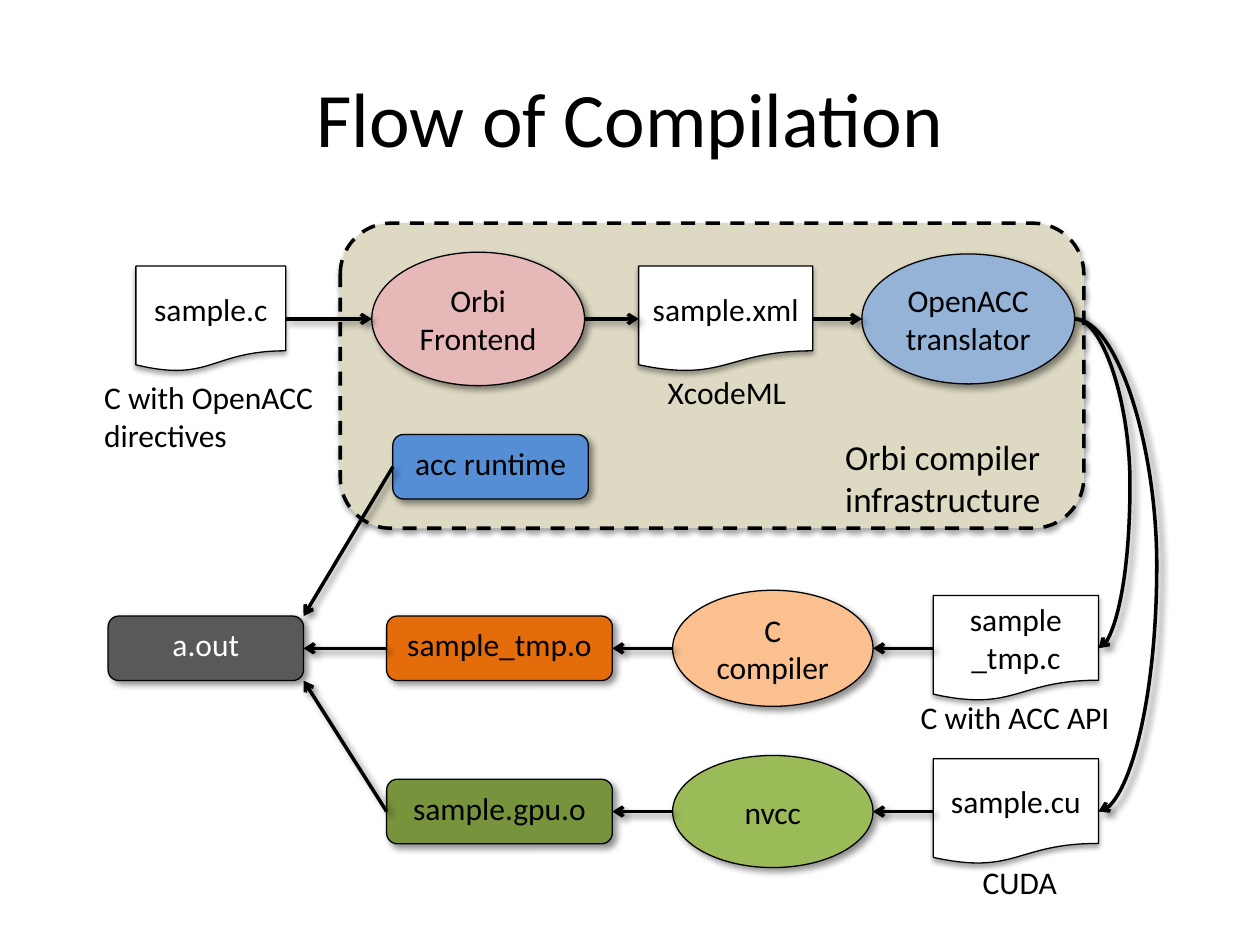
from lxml import etree
from pptx import Presentation
from pptx.dml.color import RGBColor
from pptx.enum import dml, shapes, text
from pptx.oxml import ns
from pptx.util import Cm, Pt

# Content: lengths in cm, nodes placed by their centres
TITLE = "Flow of Compilation"
ROWS = {"front": 6.43, "run": 9.41, "host": 13.07, "gpu": 16.36}
PANEL = (6.86, 4.5, 14.99, 6.15)

# key: words, kind, fill, centre x, row, width, height
NODES = {
    "src": ("sample.c", "doc", "white", 4.25, "front", 3.02, 2.13),
    "parse": ("Orbi Frontend", "oval", "pink", 9.64, "front", 4.29, 2.69),
    "xml": ("sample.xml", "doc", "white", 14.63, "front", 3.51, 2.13),
    "trans": ("OpenACC\ntranslator", "oval", "sky", 19.52, "front", 4.29, 2.62),
    "lib": ("acc runtime", "box", "blue", 9.89, "run", 3.94, 1.3),
    "out": ("a.out", "box", "gray", 4.15, "host", 3.94, 1.3),
    "obj": ("sample_tmp.o", "box", "orange", 10.07, "host", 4.55, 1.3),
    "cc": ("C compiler", "oval", "peach", 15.58, "host", 4.04, 2.34),
    "tmp": ("sample\n_tmp.c", "doc", "white", 20.48, "host", 3.33, 2.13),
    "gpu": ("sample.gpu.o", "box", "green", 10.07, "gpu", 4.55, 1.3),
    "nvcc": ("nvcc", "oval", "lime", 15.58, "gpu", 4.04, 2.26),
    "cu": ("sample.cu", "doc", "white", 20.48, "gpu", 3.33, 2.13),
}

# from, side, to, side
FLOWS = [
    ("src", "right", "parse", "left"), ("parse", "right", "xml", "left"),
    ("xml", "right", "trans", "left"), ("tmp", "left", "cc", "right"),
    ("cc", "left", "obj", "right"), ("obj", "left", "out", "right"),
    ("cu", "left", "nvcc", "right"), ("nvcc", "left", "gpu", "right"),
    ("lib", "left", "out", "top right"), ("gpu", "left", "out", "low right"),
]
# target of a curve from the translator, x of its bulge
CURVES = [("tmp", 22.78), ("cu", 23.32)]

# words, left, top, width, height, size, wrap
LABELS = [
    ("Orbi compiler infrastructure", 16.79, 8.66, 4.8, 1.96, "large", True),
    ("XcodeML", 13.21, 7.39, 2.95, 1.02, "body", False),
    ("C with ACC API", 18.31, 13.94, 4.52, 1.02, "body", True),
    ("CUDA", 19.56, 17.27, 2.03, 1.02, "body", False),
    ("C with OpenACC\ndirectives", 1.85, 7.49, 4.78, 1.8, "body", False),
]

THEME = {
    "font": "Calibri",
    "size": {"title": 44, "large": 20, "body": 18},
    "line": {"thin": 0.75, "bold": 2},
    "color": {
        "black": "000000", "white": "FFFFFF", "sand": "DDD9C3",
        "pink": "E6B9B8", "sky": "95B3D7", "blue": "558ED5",
        "gray": "595959", "orange": "E46C0A", "peach": "FAC090",
        "green": "77933C", "lime": "9BBB59",
    },
    # opacity %, blur pt, distance pt, angle
    "shadow": {"soft": (35, 3.1, 1.8, 90), "deep": (43, 4, 3, 45)},
}
KINDS = {
    "box": shapes.MSO_SHAPE.ROUNDED_RECTANGLE,
    "oval": shapes.MSO_SHAPE.OVAL,
    "doc": shapes.MSO_SHAPE.FLOWCHART_DOCUMENT,
}
SITES = {"left": 1, "right": 3}


def tint(name):
    return RGBColor.from_string(THEME["color"][name])


def add(parent, tag, **attrs):
    return etree.SubElement(parent, ns.qn(tag), {k: str(v) for k, v in attrs.items()})


def shade(shape, style):
    alpha, blur, dist, angle = THEME["shadow"][style]
    effects = add(shape._element.spPr, "a:effectLst")
    outer = add(effects, "a:outerShdw", blurRad=Pt(blur), dist=Pt(dist),
                dir=angle * 60000, algn="tl", rotWithShape=0)
    color = add(outer, "a:srgbClr", val=THEME["color"]["black"])
    add(color, "a:alpha", val=alpha * 1000)


def write(frame, words, size="body", color="black", align=None):
    frame.text = words
    for para in frame.paragraphs:
        para.alignment = align
        para.font.name = THEME["font"]
        para.font.size = Pt(THEME["size"][size])
        para.font.color.rgb = tint(color)


def draw(slide, kind, place, fill, weight, style):
    shape = slide.shapes.add_shape(KINDS[kind], *map(Cm, place))
    shape.fill.solid()
    shape.fill.fore_color.rgb = tint(fill)
    shape.line.color.rgb = tint("black")
    shape.line.width = Pt(THEME["line"][weight])
    shade(shape, style)
    return shape


def point(key, side):
    _, _, _, x, row, w, h = NODES[key]
    x += w / 2 if "right" in side else -w / 2
    shift = {"top": -h / 2, "low": h / 2}.get(side.split()[0], 0)
    return x, ROWS[row] + shift


def link(slide, kind, start, end):
    line = slide.shapes.add_connector(kind, *map(Cm, start + end))
    line.line.color.rgb = tint("black")
    line.line.width = Pt(THEME["line"]["bold"])
    add(line.line._get_or_add_ln(), "a:tailEnd", type="arrow")
    shade(line, "deep")
    return line


def main():
    deck = Presentation()
    deck.slide_width, deck.slide_height = Cm(25.4), Cm(19.05)
    slide = deck.slides.add_slide(deck.slide_layouts[5])

    # Title
    title = slide.shapes.title
    title.left, title.top, title.width, title.height = map(Cm, (1.27, 0.76, 22.86, 3.18))
    write(title.text_frame, TITLE, "title", align=text.PP_ALIGN.CENTER)

    # Dashed panel behind the compiler parts
    panel = draw(slide, "box", PANEL, "sand", "bold", "soft")
    panel.line.dash_style = dml.MSO_LINE.DASH

    # Nodes
    made = {}
    for key, (words, kind, fill, x, row, w, h) in NODES.items():
        place = (x - w / 2, ROWS[row] - h / 2, w, h)
        style = "soft" if kind == "doc" else "deep"
        node = made[key] = draw(slide, kind, place, fill, "thin", style)
        color = "white" if fill == "gray" else "black"
        write(node.text_frame, words, color=color, align=text.PP_ALIGN.CENTER)
        if kind == "box":
            node.text_frame.vertical_anchor = text.MSO_ANCHOR.TOP

    # Straight arrows, joined at the sides of boxes and documents
    for src, side, dst, goal in FLOWS:
        line = link(slide, shapes.MSO_CONNECTOR.STRAIGHT, point(src, side), point(dst, goal))
        if NODES[src][1] != "oval":
            line.begin_connect(made[src], SITES[side])
        if NODES[dst][1] != "oval" and goal in SITES:
            line.end_connect(made[dst], SITES[goal])

    # Curved arrows from the translator
    start = point("trans", "right")
    for dst, bulge in CURVES:
        end = point(dst, "right")
        line = link(slide, shapes.MSO_CONNECTOR.CURVE, start, end)
        bend = round((bulge - start[0]) / (end[0] - start[0]) * 100000)
        guides = line._element.spPr.find(ns.qn("a:prstGeom")).find(ns.qn("a:avLst"))
        add(guides, "a:gd", name="adj1", fmla=f"val {bend}")

    # Labels
    for words, x, y, w, h, size, wrap in LABELS:
        label = slide.shapes.add_textbox(*map(Cm, (x, y, w, h)))
        label.text_frame.word_wrap = wrap
        write(label.text_frame, words, size)

    deck.save("out.pptx")


if __name__ == "__main__":
    main()
